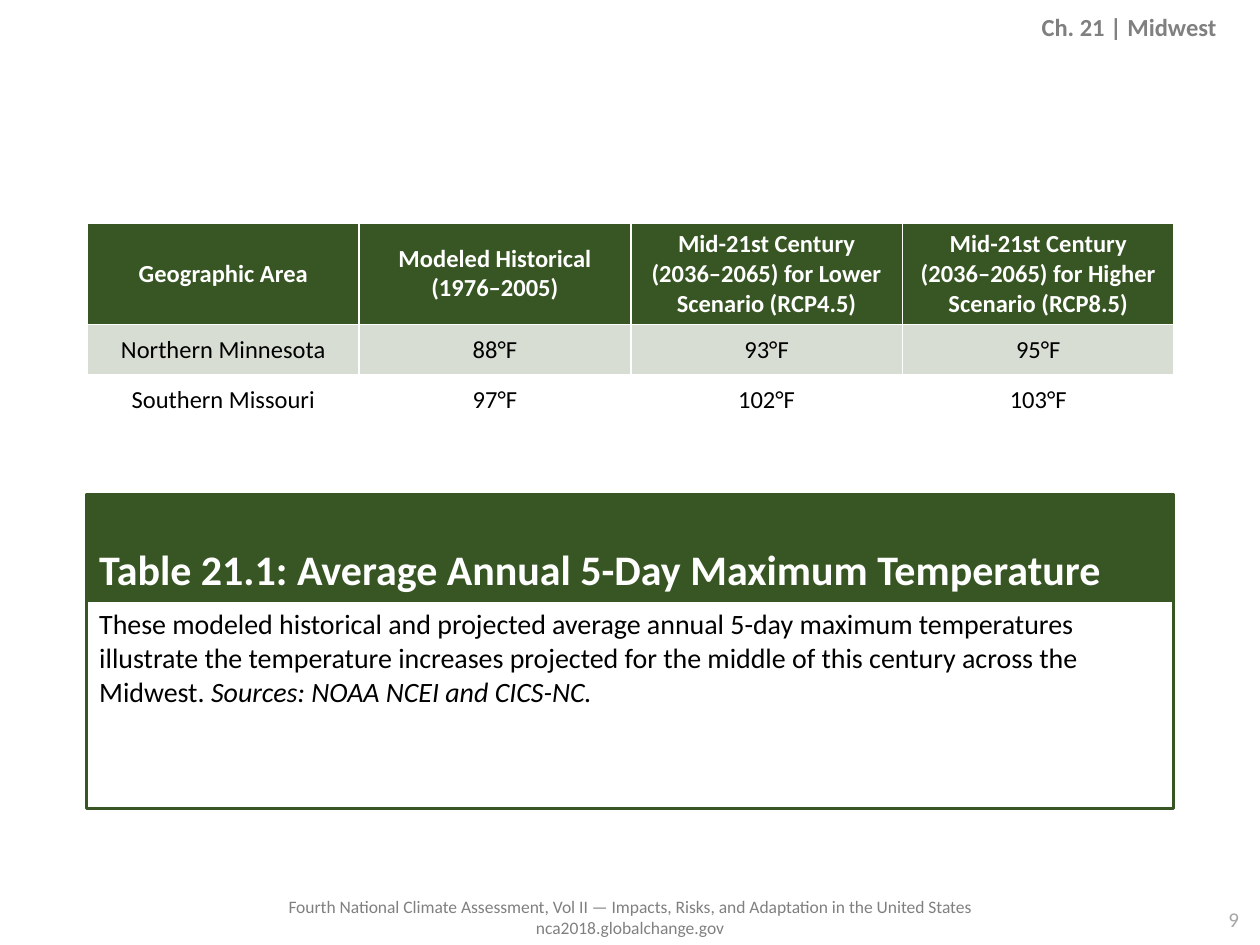
from dataclasses import dataclass

from lxml import etree
from pptx import Presentation
from pptx import util as u
from pptx.dml import color
from pptx.enum import text
from pptx.oxml import ns

Pt = u.Pt
ALIGN = text.PP_ALIGN
ANCHOR = text.MSO_ANCHOR


@dataclass(frozen=True)
class Theme:
    font: str = "Calibri"
    green: str = "385623"
    band: str = "D7DDD3"
    white: str = "FFFFFF"
    black: str = "000000"
    gray: str = "808080"
    light_gray: str = "A6A6A6"
    title: int = 24
    body: int = 16
    label: int = 14
    number: int = 12
    footer: int = 10


THEME = Theme()

TABLE_ROWS = [
    ["Geographic Area", "Modeled Historical (1976–2005)",
     "Mid-21st Century (2036–2065) for Lower Scenario (RCP4.5)",
     "Mid-21st Century (2036–2065) for Higher Scenario (RCP8.5)"],
    ["Northern Minnesota", "88°F", "93°F", "95°F"],
    ["Southern Missouri", "97°F", "102°F", "103°F"],
]


def set_values(target, values):
    for name, value in values.items():
        setattr(target, name, value)


def place(shape, box):
    names = ("left", "top", "width", "height")
    set_values(shape, {name: Pt(value) for name, value in zip(names, box)})


def write(frame, paragraphs, size, ink, bold=False, anchor=ANCHOR.TOP, **layout):
    """Fill a text frame; each paragraph is a list of (words, italic) spans."""
    set_values(frame, {"word_wrap": True, "vertical_anchor": anchor})
    for index, spans in enumerate(paragraphs):
        para = frame.add_paragraph() if index else frame.paragraphs[0]
        set_values(para, {"space_before": Pt(0), **layout})
        for words, italic in spans:
            span = para.add_run()
            span.text = words
            set_values(span.font, {"name": THEME.font, "size": Pt(size),
                                   "bold": bold, "italic": italic})
            span.font.color.rgb = color.RGBColor.from_string(ink)


def paint(fill, shade):
    fill.solid()
    fill.fore_color.rgb = color.RGBColor.from_string(shade)


def outline(shape):
    paint(shape.line.fill, THEME.green)
    shape.line.width = Pt(1.5)


def add_border(cell):
    properties = cell._tc.get_or_add_tcPr()
    for side in ("lnL", "lnR", "lnT", "lnB"):
        line = etree.SubElement(properties, ns.qn(f"a:{side}"), w=str(Pt(1)))
        solid = etree.SubElement(line, ns.qn("a:solidFill"))
        etree.SubElement(solid, ns.qn("a:srgbClr"), val=THEME.white)


def fill_header(holder, box):
    place(holder, box)
    holder.text_frame.auto_size = text.MSO_AUTO_SIZE.NONE
    write(holder.text_frame, [[("Ch. 21 | Midwest", False)]], THEME.label,
          THEME.gray, True, ANCHOR.MIDDLE, alignment=ALIGN.RIGHT, line_spacing=0.9)


def add_temperature_table(page, box):
    left, top, width, height = box
    header_height = height / 2
    row_height = (height - header_height) / (len(TABLE_ROWS) - 1)
    table = page.shapes.add_table(len(TABLE_ROWS), len(TABLE_ROWS[0]),
                                  *map(Pt, box)).table
    for column in table.columns:
        column.width = Pt(width / len(TABLE_ROWS[0]))
    # Header row, then alternating bands
    styles = [(THEME.green, THEME.white), (THEME.band, THEME.black),
              (THEME.white, THEME.black)]
    for index, (labels, (shade, ink)) in enumerate(zip(TABLE_ROWS, styles)):
        table.rows[index].height = Pt(row_height if index else header_height)
        for column, label in enumerate(labels):
            cell = table.cell(index, column)
            add_border(cell)
            paint(cell.fill, shade)
            cell.vertical_anchor = ANCHOR.MIDDLE
            write(cell.text_frame, [[(label, False)]], THEME.label, ink,
                  index == 0, ANCHOR.MIDDLE, alignment=ALIGN.CENTER)


def fill_caption(title, body, box):
    left, top, width, height = box
    title_height = 60.8
    parts = [(title, (left, top, width, title_height)),
             (body, (left, top + title_height, width, height - title_height))]
    for shape, area in parts:
        place(shape, area)
        outline(shape)
        shape.text_frame.auto_size = text.MSO_AUTO_SIZE.NONE
    paint(title.fill, THEME.green)
    write(title.text_frame,
          [[("Table 21.1: Average Annual 5-Day Maximum Temperature", False)]],
          THEME.title, THEME.white, True, ANCHOR.BOTTOM,
          alignment=ALIGN.LEFT, line_spacing=0.9)
    write(body.text_frame,
          [[("These modeled historical and projected average annual 5-day maximum "
             "temperatures illustrate the temperature increases projected for the "
             "middle of this century across the Midwest. ", False),
            ("Sources: NOAA NCEI and CICS-NC.", True)]],
          THEME.body, THEME.black, alignment=ALIGN.LEFT, space_after=Pt(6))


def add_footer(page, box):
    left, top, width, height = box
    # Centred report credit
    credit_width = 427
    credit = page.shapes.add_textbox(Pt(left + (width - credit_width) / 2), Pt(top),
                                     Pt(credit_width), Pt(height))
    write(credit.text_frame,
          [[("Fourth National Climate Assessment, Vol II — Impacts, Risks, and "
             "Adaptation in the United States", False)],
           [("nca2018.globalchange.gov", False)]],
          THEME.footer, THEME.gray, alignment=ALIGN.CENTER)
    # Page number
    number = page.shapes.add_textbox(Pt(577.5), Pt(515.5), Pt(137.5), Pt(19.5))
    write(number.text_frame, [[("9", False)]], THEME.number, THEME.light_gray,
          anchor=ANCHOR.MIDDLE, alignment=ALIGN.RIGHT)


def main():
    deck = Presentation()
    set_values(deck, {"slide_width": Pt(720), "slide_height": Pt(540)})
    page = deck.slides.add_slide(deck.slide_layouts.get_by_name("Comparison"))
    holders = {holder.placeholder_format.idx: holder for holder in page.placeholders}
    for unused in (2, 4):
        element = holders[unused].element
        element.getparent().remove(element)

    add_footer(page, (0, 508.3, 720, 31.7))
    add_temperature_table(page, (50, 127.4, 621, 116))
    fill_caption(holders[0], holders[1], (49.5, 282.4, 621, 179.6))
    fill_header(holders[3], (16.5, 5, 686, 22.5))
    deck.save("out.pptx")


if __name__ == "__main__":
    main()
